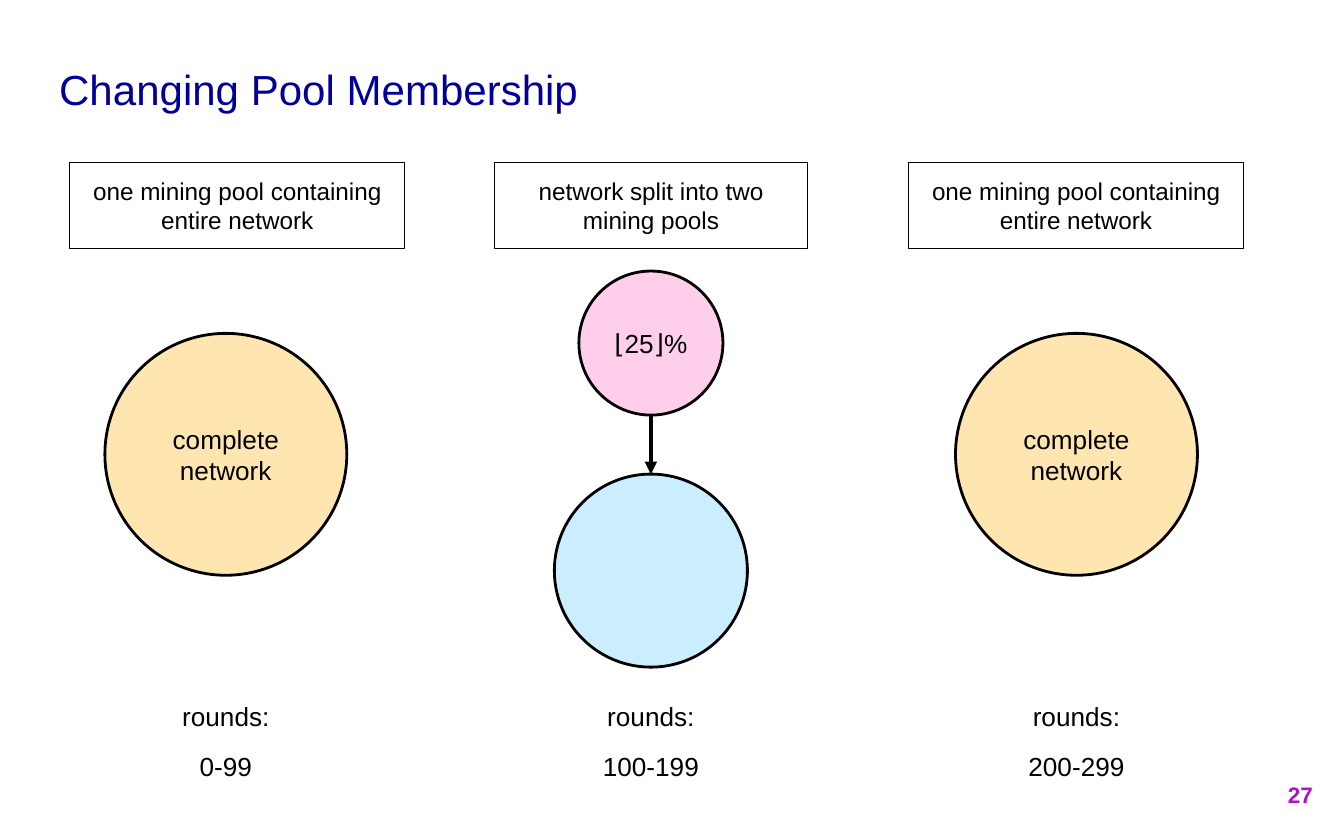
from lxml.etree import SubElement
from pptx import Presentation
from pptx.dml.color import RGBColor
from pptx.enum.shapes import MSO_CONNECTOR as Link, MSO_SHAPE as Form
from pptx.enum.text import MSO_ANCHOR as Anchor, PP_ALIGN as Align
from pptx.oxml.ns import qn
from pptx.util import Pt


def style(box, text, size, color="000000", align=Align.CENTER, bold=False):
    """Write the text into a shape, one paragraph a line, centred vertically."""
    frame = box.text_frame
    frame.text = text
    frame.word_wrap = True
    frame.vertical_anchor = Anchor.MIDDLE
    frame.margin_left = frame.margin_right = Pt(7.2)
    frame.margin_top = frame.margin_bottom = Pt(7.2)
    for para in frame.paragraphs:
        para.alignment = align
        for run in para.runs:
            run.font.name = "Arial"
            run.font.size = Pt(size)
            run.font.bold = bold
            run.font.color.rgb = RGBColor.from_string(color)


def draw(form, mid, top, wide, high, fill=None, line=1.5):
    """Add an outlined shape centred on x = mid."""
    shape = slide.shapes.add_shape(
        form, Pt(mid - wide / 2), Pt(top), Pt(wide), Pt(high))
    shape.shadow.inherit = False
    if fill:
        shape.fill.solid()
        shape.fill.fore_color.rgb = RGBColor.from_string(fill)
    else:
        shape.fill.background()
    shape.line.color.rgb = RGBColor.from_string("000000")
    shape.line.width = Pt(line)
    return shape


prs = Presentation()
prs.slide_width, prs.slide_height = Pt(720), Pt(450)
slide = prs.slides.add_slide(prs.slide_layouts[5])

title = slide.shapes.title
title.left, title.top, title.width, title.height = Pt(24.5), Pt(22.5), Pt(671), Pt(50.4)
style(title, "Changing Pool Membership", 22.5, "000099", Align.LEFT)

page = slide.shapes.add_textbox(Pt(667.4), Pt(408.2), Pt(43), Pt(34.6))
style(page, "27", 12, "AD13BF", Align.RIGHT, True)

# Outer columns: the whole network as one pool
first, middle, last = 121, 348.7, 576.7
for mid in (first, last):
    pool = draw(Form.OVAL, mid, 178.6, 129.6, 129.6, "FFE6B0")
    style(pool, "complete\nnetwork", 14)

# Middle column: a small pool moving into a larger one
small = draw(Form.OVAL, middle, 145.2, 77.2, 77.2, "FF81C9")
tint = small.fill._xPr.find(qn("a:solidFill"))[0]
SubElement(tint, qn("a:alpha"), val="39000")
style(small, "⌊25⌋%", 14)
large = draw(Form.OVAL, middle, 254, 103.4, 103.4, "CBEEFF")

arrow = slide.shapes.add_connector(
    Link.STRAIGHT, Pt(middle), Pt(222.4), Pt(middle), Pt(254))
arrow.end_connect(large, 0)
arrow.line.color.rgb = RGBColor.from_string("000000")
arrow.line.width = Pt(2.25)
SubElement(arrow.line._get_or_add_ln(), qn("a:tailEnd"), type="triangle")
SubElement(arrow._element.spPr, qn("a:effectLst"))

# Headings above and round numbers below each column
whole = "one mining pool containing entire network"
split = "network split into two mining pools"
for mid, head, place, wide, rounds in (
    (first, whole, 127, 179.3, "0-99"),
    (middle, split, middle, 167.8, "100-199"),
    (last, whole, 576.4, 179.3, "200-299"),
):
    style(draw(Form.RECTANGLE, place, 87, wide, 46, line=0.75), head, 13)
    for text, top in (("rounds:", 367.5), (rounds, 394.8)):
        label = slide.shapes.add_textbox(Pt(mid - 60), Pt(top), Pt(120), Pt(31.7))
        style(label, text, 14)

prs.save("out.pptx")
